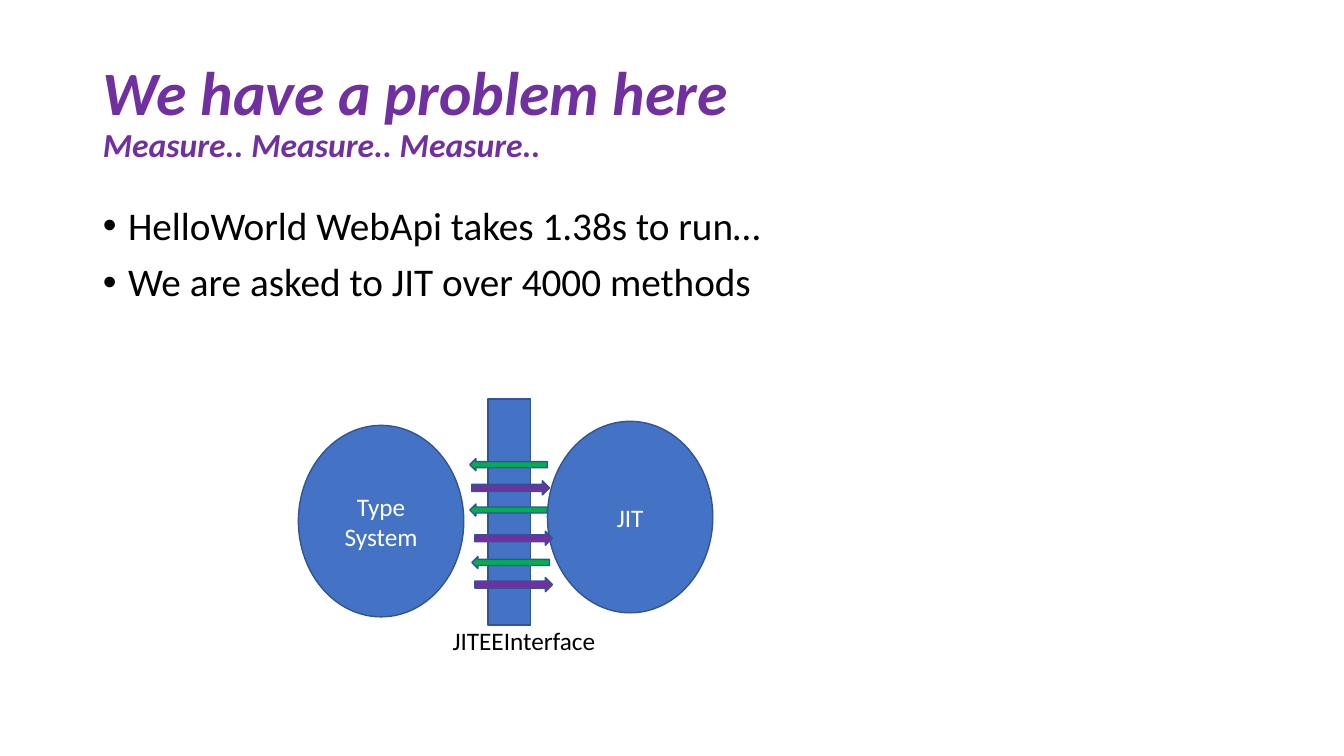
from dataclasses import dataclass

from pptx import Presentation
from pptx.dml.color import RGBColor
from pptx.enum.shapes import MSO_SHAPE as Preset
from pptx.enum.text import MSO_ANCHOR as Anchor, MSO_AUTO_SIZE as AutoSize, PP_ALIGN as Align
from pptx.util import Inches, Pt


@dataclass(frozen=True)
class Theme:
    font: str = "Calibri"
    purple: str = "7030A0"
    green: str = "00B050"
    blue: str = "4472C4"
    outline: str = "325491"
    black: str = "000000"
    white: str = "FFFFFF"
    title_size: int = 44
    subtitle_size: int = 24
    body_size: int = 28
    label_size: int = 18


THEME = Theme()
SLIDE_SIZE = (13.33, 7.5)

TITLE = "We have a problem here"
SUBTITLE = "Measure.. Measure.. Measure.."
BULLETS = ["HelloWorld WebApi takes 1.38s to run…", "We are asked to JIT over 4000 methods"]
INTERFACE_LABEL = "JITEEInterface"

MARGIN, CONTENT_WIDTH = 0.92, 11.5
COMPONENT_SIZE = (1.64, 1.9)
COMPONENTS = [("Type\nSystem", 2.96, 4.22), ("JIT", 5.43, 4.18)]
INTERFACE_BOX = (4.84, 3.96, 0.42, 2.24)
LABEL_BOX = (4.39, 6.15, 2.69, 0.4)

# Preset, colour, width and height, then the left and top of each call
CALLS = [
    (Preset.LEFT_ARROW, THEME.green, (0.77, 0.12), [(4.68, 5.52), (4.66, 5.0), (4.66, 4.55)]),
    (Preset.RIGHT_ARROW, THEME.purple, (0.77, 0.14), [(4.71, 5.27), (4.68, 4.77), (4.71, 5.73)]),
]


def place(shape, left, top, width, height):
    shape.left, shape.top = Inches(left), Inches(top)
    shape.width, shape.height = Inches(width), Inches(height)


def style_run(run, size, color, emphasis=None):
    font = run.font
    font.name, font.size = THEME.font, Pt(size)
    font.color.rgb = RGBColor.from_string(color)
    font.bold = font.italic = emphasis


def add_block(slide, preset, box, fill):
    shape = slide.shapes.add_shape(preset, *map(Inches, box))
    shape.shadow.inherit = False
    shape.fill.solid()
    shape.fill.fore_color.rgb = RGBColor.from_string(fill)
    shape.line.color.rgb = RGBColor.from_string(THEME.outline)
    shape.line.width = Pt(1)
    return shape


def fill_title(slide):
    title = slide.shapes.title
    place(title, MARGIN, 0.4, CONTENT_WIDTH, 1.45)
    frame = title.text_frame
    frame.text = f"{TITLE}\v{SUBTITLE}"
    frame.auto_size, frame.vertical_anchor = AutoSize.NONE, Anchor.MIDDLE
    paragraph = frame.paragraphs[0]
    paragraph.alignment, paragraph.line_spacing = Align.LEFT, 0.9
    for run, size in zip(paragraph.runs, (THEME.title_size, THEME.subtitle_size)):
        style_run(run, size, THEME.purple, emphasis=True)


def fill_body(slide):
    body = slide.placeholders[1]
    place(body, MARGIN, 2, CONTENT_WIDTH, 4.76)
    frame = body.text_frame
    frame.text = "\n".join(BULLETS)
    frame.auto_size = AutoSize.NONE
    for paragraph in frame.paragraphs:
        paragraph.line_spacing, paragraph.space_before = 0.9, Pt(10)
        properties = paragraph._p.get_or_add_pPr()
        properties.set("marL", str(Inches(0.25)))
        properties.set("indent", str(Inches(-0.25)))
        style_run(paragraph.runs[0], THEME.body_size, THEME.black)


def draw_diagram(slide):
    for name, left, top in COMPONENTS:
        ellipse = add_block(slide, Preset.OVAL, (left, top, *COMPONENT_SIZE), THEME.blue)
        ellipse.text_frame.text = name
        ellipse.text_frame.vertical_anchor = Anchor.MIDDLE
        for paragraph in ellipse.text_frame.paragraphs:
            paragraph.alignment = Align.CENTER
            style_run(paragraph.runs[0], THEME.label_size, THEME.white)

    add_block(slide, Preset.RECTANGLE, INTERFACE_BOX, THEME.blue)
    label = slide.shapes.add_textbox(*map(Inches, LABEL_BOX)).text_frame
    label.text = INTERFACE_LABEL
    label.word_wrap, label.auto_size = True, AutoSize.SHAPE_TO_FIT_TEXT
    style_run(label.paragraphs[0].runs[0], THEME.label_size, THEME.black)

    for preset, color, size, positions in CALLS:
        for position in positions:
            add_block(slide, preset, (*position, *size), color)


def main():
    presentation = Presentation()
    presentation.slide_width, presentation.slide_height = map(Inches, SLIDE_SIZE)
    slide = presentation.slides.add_slide(presentation.slide_layouts[1])
    fill_title(slide)
    fill_body(slide)
    draw_diagram(slide)
    presentation.save("out.pptx")


if __name__ == "__main__":
    main()
